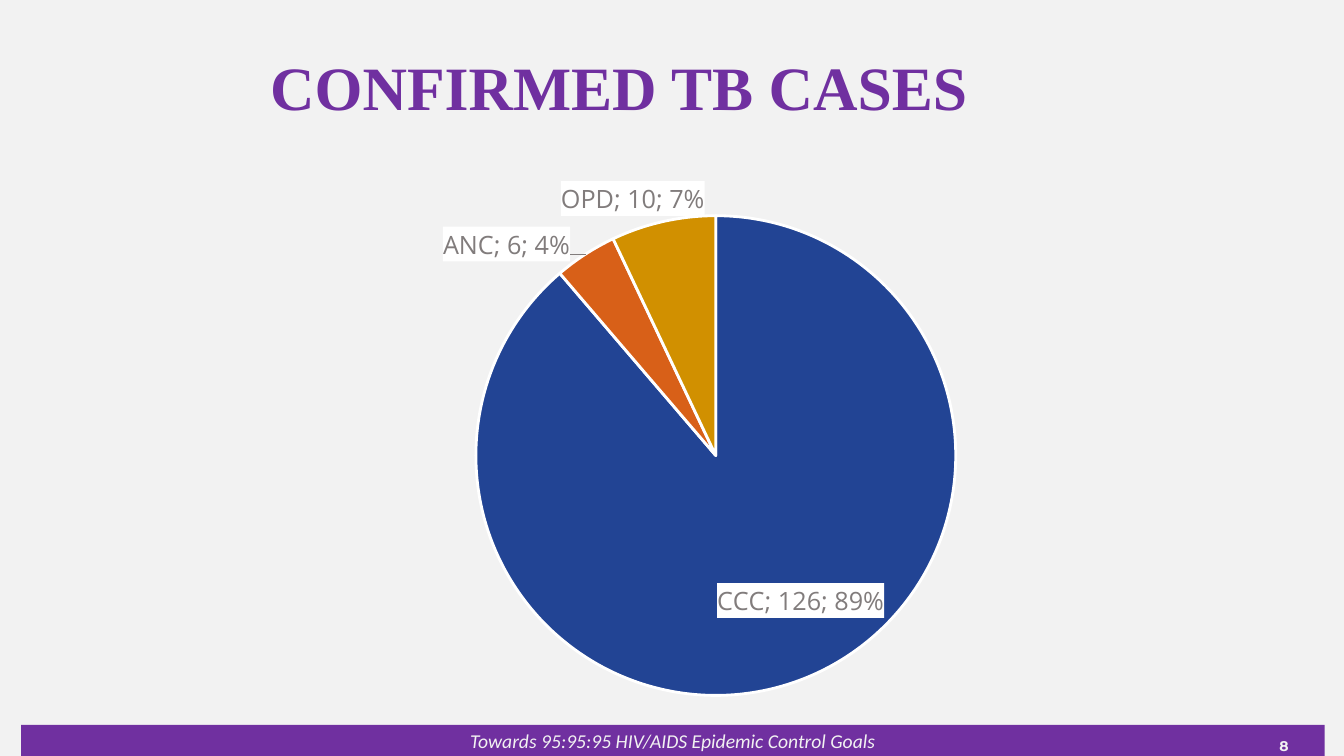
from lxml import etree
from pptx import Presentation
from pptx.chart.data import CategoryChartData
from pptx.dml.color import RGBColor
from pptx.enum.chart import XL_CHART_TYPE, XL_LABEL_POSITION
from pptx.enum.shapes import MSO_SHAPE
from pptx.enum.text import MSO_ANCHOR, PP_ALIGN
from pptx.oxml import parse_xml
from pptx.oxml.ns import nsdecls, qn
from pptx.util import Inches, Pt

PIE = XL_CHART_TYPE.PIE
BEST_FIT = XL_LABEL_POSITION.BEST_FIT
RECT = MSO_SHAPE.RECTANGLE
MIDDLE = MSO_ANCHOR.MIDDLE
LEFT, CENTER, RIGHT = PP_ALIGN.LEFT, PP_ALIGN.CENTER, PP_ALIGN.RIGHT

PURPLE, PALE, WHITE = "7030A0", "F2F2F2", "FFFFFF"
CASES = [("CCC", 126, "224494"), ("ANC", 6, "D86018"), ("OPD", 10, "D19000")]


def rgb(value):
    return RGBColor.from_string(value)


def fill(part, color):
    part.fill.solid()
    part.fill.fore_color.rgb = rgb(color)


def set_font(font, color, **formats):
    font.color.rgb = rgb(color)
    for name, value in formats.items():
        setattr(font, name, value)


def write(s, text, align, color, **formats):
    """Put one line of text, centred vertically, in a shape."""
    tf = s.text_frame
    tf.word_wrap = True
    tf.vertical_anchor = MIDDLE
    for side in ("left", "right", "top", "bottom"):
        setattr(tf, f"margin_{side}", 0)
    p = tf.paragraphs[0]
    p.alignment = align
    r = p.add_run()
    r.text = text
    set_font(r.font, color, **formats)


def add_title(slide, x, y, w, h):
    s = slide.shapes.title
    s.left, s.top, s.width, s.height = map(Inches, (x, y, w, h))
    write(s, "CONFIRMED TB CASES", LEFT, PURPLE,
          name="Times New Roman", size=Pt(44), bold=True)


def add_footer(slide, x, y, w, h):
    bar = slide.shapes.add_shape(RECT, *map(Inches, (x, y, w, h)))
    bar.shadow.inherit = False
    fill(bar, PURPLE)
    bar.line.fill.background()
    write(bar, "Towards 95:95:95 HIV/AIDS Epidemic Control Goals", CENTER, PALE,
          name="Calibri", size=Pt(14), italic=True)
    number = slide.shapes.add_textbox(
        *map(Inches, (x + w - 1.09, y + 0.1, 0.73, 0.21)))
    write(number, "8", RIGHT, PALE, name="Montserrat", size=Pt(10), bold=True)


def place_plot(chart, **fractions):
    """Fix the inner plot area as fractions of the chart."""
    values = "".join(f'<c:{k} val="{v}"/>' for k, v in fractions.items())
    layout = parse_xml(
        f'<c:layout {nsdecls("c")}><c:manualLayout><c:layoutTarget val="inner"/>'
        f'<c:xMode val="edge"/><c:yMode val="edge"/>{values}'
        '</c:manualLayout></c:layout>')
    plot_area = chart.plots[0]._element.getparent()
    for old in plot_area.findall(qn("c:layout")):
        plot_area.remove(old)
    plot_area.insert(0, layout)


def format_labels(series):
    labels = series.data_labels
    set_font(labels.font, "817C7C", name="Open Sans", size=Pt(18))
    for name in ("show_category_name", "show_value", "show_percentage"):
        setattr(labels, name, True)
    labels.position = BEST_FIT
    xml = labels._element
    xml.find(qn("c:txPr")).addprevious(parse_xml(
        f'<c:spPr {nsdecls("c", "a")}><a:solidFill><a:srgbClr val="{WHITE}"/>'
        '</a:solidFill></c:spPr>'))
    separator = etree.Element(qn("c:separator"))
    separator.text = "; "
    xml.find(qn("c:showBubbleSize")).addnext(separator)


def add_cases_pie(slide, x, y, w, h):
    data = CategoryChartData()
    data.categories = [name for name, _, _ in CASES]
    data.add_series("Series 1", [count for _, count, _ in CASES])
    chart = slide.shapes.add_chart(PIE, *map(Inches, (x, y, w, h)), data).chart
    chart.has_title = chart.has_legend = False
    set_font(chart.font, "3A3838", name="Open Sans", size=Pt(10))
    chart.plots[0].vary_by_categories = True
    diameter = 4.76
    place_plot(chart, x=3.33 / w, y=0.52 / h, w=diameter / w, h=diameter / h)
    series = chart.plots[0].series[0]
    for i, (_, _, color) in enumerate(CASES):
        wedge = series.points[i].format
        fill(wedge, color)
        wedge.line.color.rgb = rgb(WHITE)
        wedge.line.width = Pt(2)
    format_labels(series)


def main():
    prs = Presentation()
    prs.slide_width, prs.slide_height = Inches(13.33), Inches(7.5)
    slide = prs.slides.add_slide(prs.slide_layouts[5])
    fill(slide.background, PALE)
    add_footer(slide, 0.21, 7.19, 12.93, 0.31)
    add_title(slide, 2.68, 0.4, 7.39, 0.9)
    add_cases_pie(slide, 1.39, 1.62, 10.67, 5.43)
    prs.save("out.pptx")


if __name__ == "__main__":
    main()
